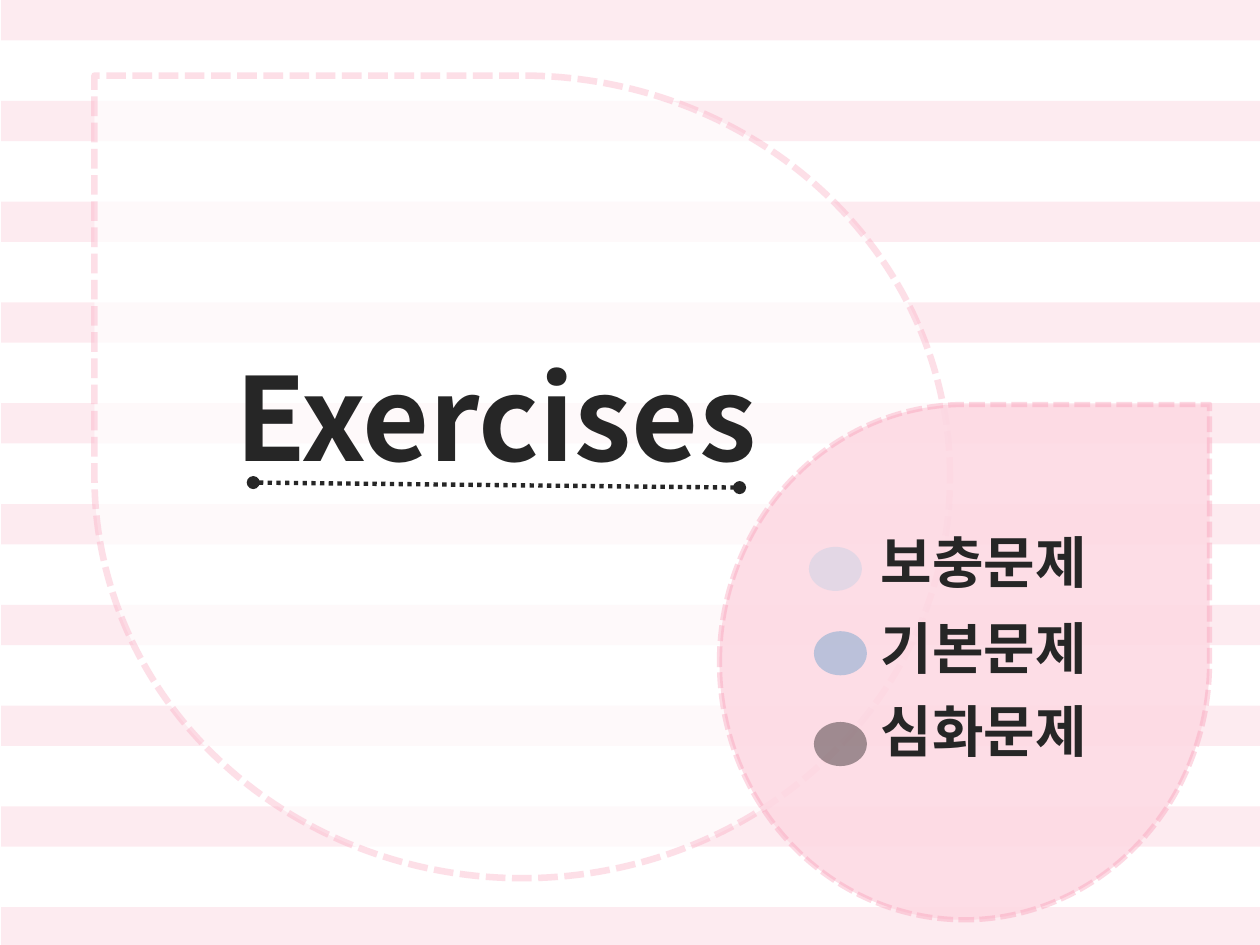
from typing import NamedTuple

from lxml import etree
from pptx import Presentation
from pptx.dml.color import RGBColor
from pptx.enum import dml, shapes, text
from pptx.oxml import ns
from pptx.util import Inches, Pt

COLORS = {
    "white": "FFFFFF",
    "pink": "FDD9E3",
    "rose": "FA98B4",
    "ink": "262626",
    "pale_blue": "B9CDE5",
    "blue": "4C93C7",
    "black": "000000",
}
FONT = "Noto Sans CJK KR"
STRIPE_COUNT = 10
STRIPE_PITCH = 0.8
STRIPE_HEIGHT = 0.32


class Box(NamedTuple):
    left: float
    top: float
    width: float
    height: float


class Drop(NamedTuple):
    box: Box
    fill: str
    fill_alpha: int
    line_width: float
    line_alpha: int
    flipped: bool


class Topic(NamedTuple):
    label: str
    label_top: float
    dot_left: float
    dot_top: float
    color: str


DROPS = [
    Drop(Box(0.75, 0.6, 6.79, 6.37), "white", 71, 3.75, 31, True),
    Drop(Box(5.71, 3.21, 3.89, 4.09), "pink", 88, 3, 37, False),
]
TOPICS = [
    Topic("보충문제", 4.14, 6.42, 4.34, "pale_blue"),
    Topic("기본문제", 4.82, 6.46, 5.01, "blue"),
    Topic("심화문제", 5.48, 6.46, 5.73, "black"),
]


def rgb(name: str) -> RGBColor:
    return RGBColor.from_string(COLORS[name])


def add_child(parent, tag: str, **attrs: str):
    return etree.SubElement(parent, ns.qn(tag), attrs)


def set_color(fill, name: str, alpha: int) -> None:
    fill.solid()
    fill.fore_color.rgb = rgb(name)
    color = fill._xPr.find(".//" + ns.qn("a:srgbClr"))
    add_child(color, "a:alpha", val=str(alpha * 1000))


def add_filled(s, kind, box: Box, color: str, alpha: int):
    sp = s.shapes.add_shape(kind, *map(Inches, box))
    sp.shadow.inherit = False
    set_color(sp.fill, color, alpha)
    sp.line.fill.background()
    return sp


def add_drop(s, drop: Drop) -> None:
    sp = add_filled(s, shapes.MSO_SHAPE.TEAR, drop.box, drop.fill, drop.fill_alpha)
    set_color(sp.line.fill, "rose", drop.line_alpha)
    sp.line.width = Pt(drop.line_width)
    sp.line.dash_style = dml.MSO_LINE.SQUARE_DOT
    sp.line._ln.find(ns.qn("a:prstDash")).set("val", "sysDash")
    if drop.flipped:
        sp._element.spPr.xfrm.set("flipH", "1")


def add_underline(s) -> None:
    points = map(Inches, (2.01, 3.83, 5.87, 3.87))
    sp = s.shapes.add_connector(shapes.MSO_CONNECTOR.STRAIGHT, *points)
    sp.line.color.rgb = rgb("ink")
    sp.line.width = Pt(2.5)
    sp.line.dash_style = dml.MSO_LINE.ROUND_DOT
    for tag in ("a:headEnd", "a:tailEnd"):
        add_child(sp.line._ln, tag, type="oval")
    add_child(sp._element.spPr, "a:effectLst")


def add_text(s, content: str, box: Box, *, size: float, font: str,
             align=text.PP_ALIGN.LEFT, anchor=text.MSO_ANCHOR.TOP) -> None:
    tf = s.shapes.add_textbox(*map(Inches, box)).text_frame
    tf.word_wrap = True
    tf.vertical_anchor = anchor
    p = tf.paragraphs[0]
    p.alignment = align
    r = p.add_run()
    r.text = content
    r.font.size = Pt(size)
    r.font.bold = True
    r.font.name = font
    r.font.color.rgb = rgb("ink")
    add_child(r.font._element, "a:ea", typeface=FONT)


def add_topic(s, topic: Topic) -> None:
    dot = Box(topic.dot_left, topic.dot_top, 0.42, 0.35)
    add_filled(s, shapes.MSO_SHAPE.OVAL, dot, topic.color, 37)
    add_text(s, topic.label, Box(6.89, topic.label_top, 2.41, 0.63),
             size=32, font="Arial")


def main() -> None:
    prs = Presentation()
    prs.slide_width, prs.slide_height = Inches(10), Inches(7.5)
    s = prs.slides.add_slide(prs.slide_layouts[6])
    for i in range(STRIPE_COUNT):
        stripe = Box(0.01, i * STRIPE_PITCH, 10, STRIPE_HEIGHT)
        add_filled(s, shapes.MSO_SHAPE.RECTANGLE, stripe, "pink", 50)
    for drop in DROPS:
        add_drop(s, drop)
    add_underline(s)
    add_text(s, "Exercises", Box(1.22, 2.52, 5.43, 1.56), size=66, font=FONT,
             align=text.PP_ALIGN.CENTER, anchor=text.MSO_ANCHOR.MIDDLE)
    for topic in TOPICS:
        add_topic(s, topic)
    prs.save("out.pptx")


if __name__ == "__main__":
    main()
